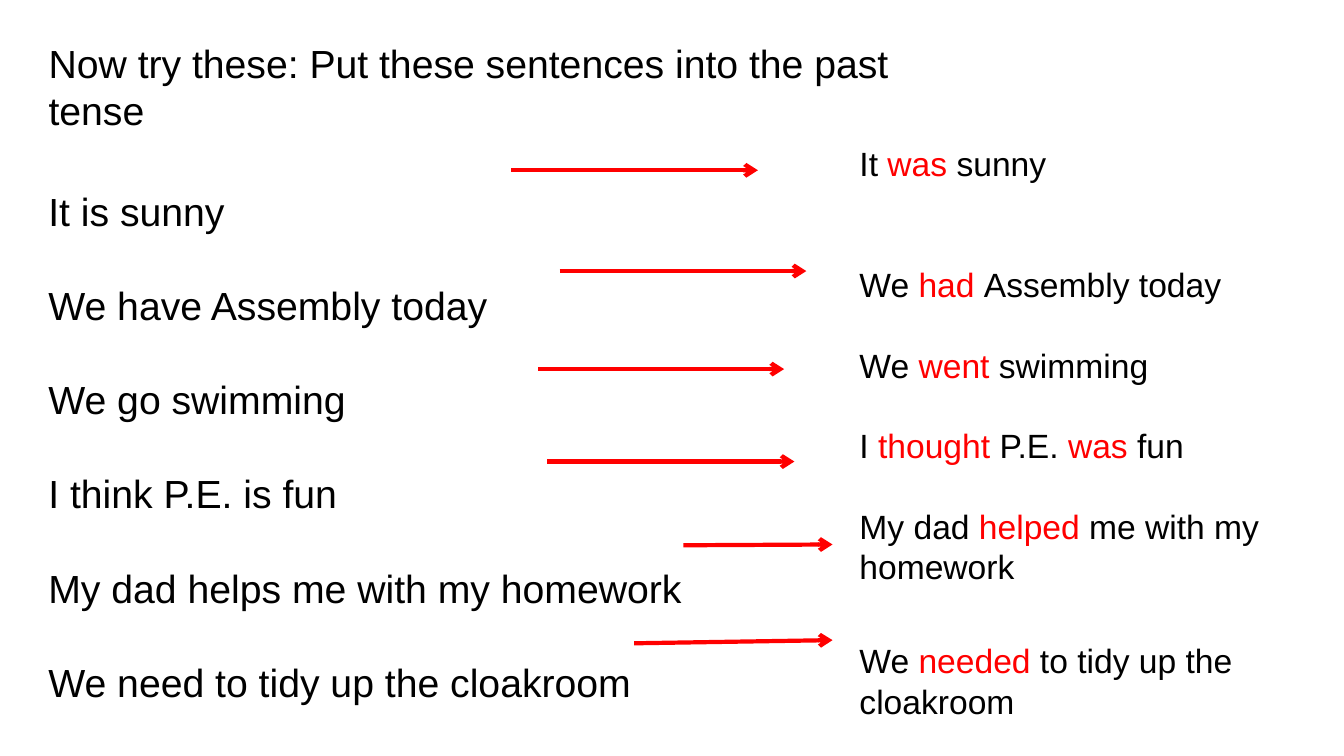
from dataclasses import dataclass

from lxml.etree import SubElement
from pptx import Presentation
from pptx.dml.color import RGBColor
from pptx.enum.shapes import MSO_CONNECTOR as Connector
from pptx.enum.text import MSO_ANCHOR as Anchor, MSO_AUTO_SIZE as AutoSize, PP_ALIGN as Align
from pptx.oxml.ns import qn
from pptx.util import Cm, Pt


@dataclass(frozen=True)
class Theme:
    font: str = "Arial"
    text: RGBColor = RGBColor(0, 0, 0)
    accent: RGBColor = RGBColor(255, 0, 0)
    sentence_size: int = 28
    answer_size: int = 24
    arrow_width: int = 3


THEME = Theme()

HEADING = "Now try these: Put these sentences into the past tense"
SENTENCES = [
    "It is sunny",
    "We have Assembly today",
    "We go swimming",
    "I think P.E. is fun",
    "My dad helps me with my homework",
    "We need to tidy up the cloakroom",
]
SENTENCE_GAP = 33.6

# Space above in points, then runs: every second run is a past tense verb
ANSWERS = [
    (0, ["It ", "was", " sunny"]),
    (57.6, ["We ", "had ", "Assembly today"]),
    (28.8, ["We ", "went", " swimming"]),
    (28.8, ["I ", "thought", " P.E. ", "was", " fun"]),
    (28.8, ["My dad ", "helped", " me with my homework"]),
    (38.4, ["We ", "needed", " to tidy up the cloakroom"]),
]

# Start x, start y, end x, end y in centimetres
ARROWS = [
    (12.88, 4.29, 19.1, 4.29),
    (14.1, 6.83, 20.32, 6.83),
    (13.56, 9.3, 19.76, 9.3),
    (13.79, 11.63, 20.02, 11.63),
    (17.22, 13.74, 20.98, 13.72),
    (15.98, 16.21, 20.98, 16.13),
]


def add_run(paragraph, text, size, color):
    run = paragraph.add_run()
    run.text = text
    run.font.name = THEME.font
    run.font.size = Pt(size)
    run.font.color.rgb = color


def fill_paragraph(paragraph, runs, size, gap=0):
    paragraph.alignment = Align.LEFT
    paragraph.space_before = Pt(gap)
    for index, text in enumerate(runs):
        add_run(paragraph, text, size, THEME.accent if index % 2 else THEME.text)


def prepare_frame(shape):
    frame = shape.text_frame
    frame.word_wrap = True
    frame.auto_size = AutoSize.NONE
    frame.vertical_anchor = Anchor.TOP
    return frame


def set_title(slide, left, top, width, height):
    title = slide.shapes.title
    title.left, title.top = Cm(left), Cm(top)
    title.width, title.height = Cm(width), Cm(height)
    frame = prepare_frame(title)
    fill_paragraph(frame.paragraphs[0], [HEADING], THEME.sentence_size)


def add_list(slide, left, top, width, height, items, size):
    box = slide.shapes.add_textbox(Cm(left), Cm(top), Cm(width), Cm(height))
    frame = prepare_frame(box)
    for index, (gap, runs) in enumerate(items):
        paragraph = frame.add_paragraph() if index else frame.paragraphs[0]
        fill_paragraph(paragraph, runs, size, gap)


def add_arrow(slide, *ends):
    arrow = slide.shapes.add_connector(Connector.STRAIGHT, *map(Cm, ends))
    arrow.line.color.rgb = THEME.accent
    arrow.line.width = Pt(THEME.arrow_width)
    SubElement(arrow.line._get_or_add_ln(), qn("a:tailEnd"), type="arrow")
    SubElement(arrow._element.spPr, qn("a:effectLst"))


def main():
    presentation = Presentation()
    presentation.slide_width = Cm(33.87)
    presentation.slide_height = Cm(19.05)
    slide = presentation.slides.add_slide(presentation.slide_layouts[5])

    # Heading and present tense sentences
    set_title(slide, 0.97, 0.86, 22.99, 2.62)
    sentences = [(SENTENCE_GAP if index else 0, [text]) for index, text in enumerate(SENTENCES)]
    add_list(slide, 0.97, 4.6, 22.99, 12.24, sentences, THEME.sentence_size)

    # Arrows to the past tense
    for ends in ARROWS:
        add_arrow(slide, *ends)

    # Past tense answers
    add_list(slide, 21.41, 3.48, 12.47, 14.96, ANSWERS, THEME.answer_size)

    presentation.save("out.pptx")


if __name__ == "__main__":
    main()
